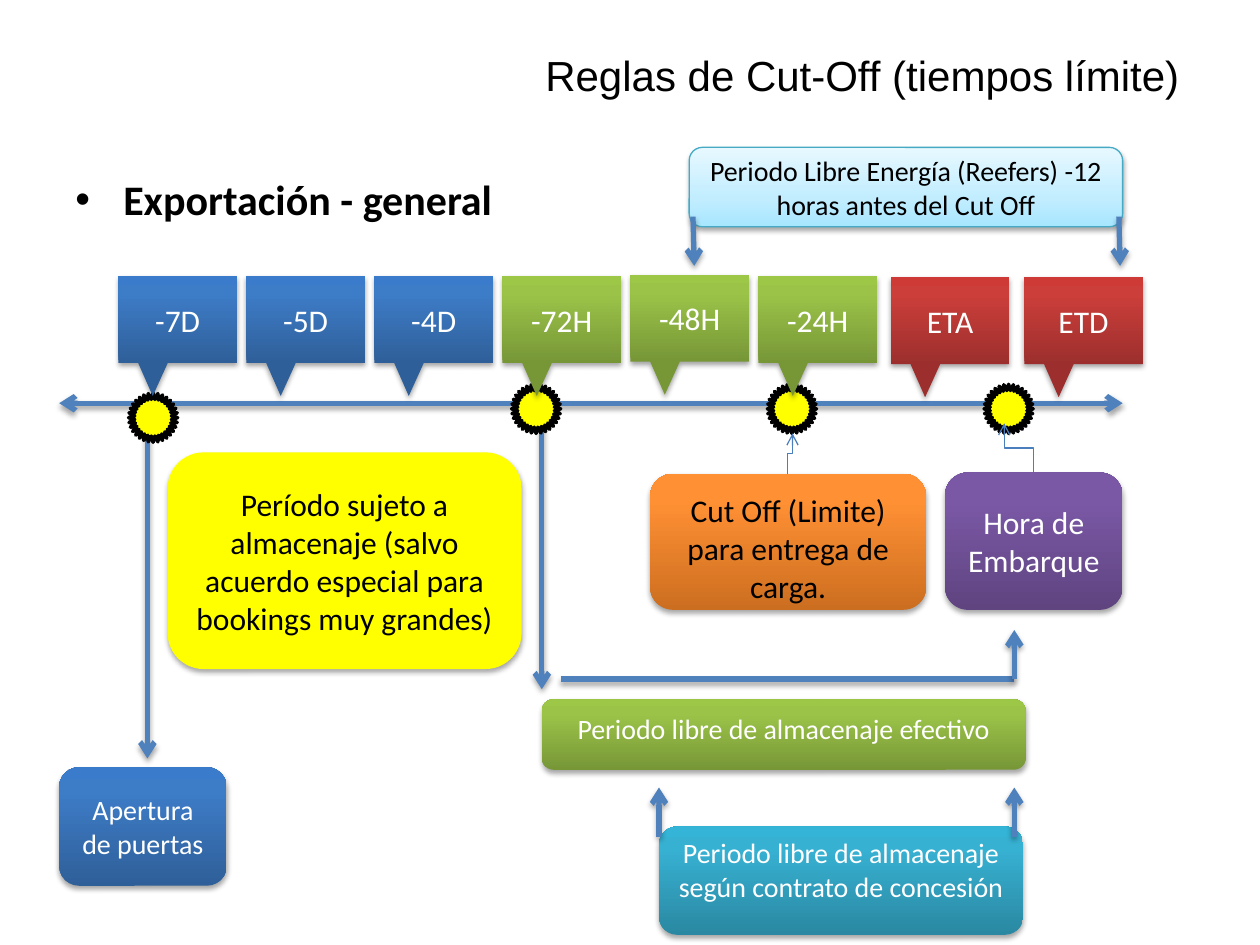
import pptx
import pptx.util
import pptx.dml.color
import pptx.enum.shapes
import pptx.enum.text
import pptx.oxml.ns
from lxml import etree

Inches = pptx.util.Inches
Pt = pptx.util.Pt
qn = pptx.oxml.ns.qn
SHAPE = pptx.enum.shapes.MSO_SHAPE
CONNECTOR = pptx.enum.shapes.MSO_CONNECTOR
ALIGN = pptx.enum.text.PP_ALIGN
ANCHOR = pptx.enum.text.MSO_ANCHOR

TITLE = "Reglas de Cut-Off (tiempos límite)"
HEADING = "Exportación - general"
BLACK, WHITE, YELLOW = "000000", "FFFFFF", "FFFF00"
ARROW_BLUE, LINK_BLUE = "4F81BD", "4B7EBC"

GRADIENTS = {
    "blue": [(0, "2F5F99"), (80, "3D7CC7"), (100, "3A7CCB")],
    "green": [(0, "779737"), (80, "9BC348"), (100, "9DC746")],
    "red": [(0, "9C2F2D"), (80, "CB3E3A"), (100, "CE3B37")],
    "orange": [(0, "CC6E20"), (80, "FF9034"), (100, "FF9136")],
    "purple": [(0, "5F4480"), (80, "7B58A6"), (100, "7C57A8")],
    "teal": [(0, "2A88A2"), (80, "37B1D2"), (100, "34B4D6")],
    "sky": [(0, "A7E6FF"), (35, "C1EDFF"), (100, "E7F8FF")],
}

HOUR_MARKS = [("-7D", "blue", 2.19), ("-5D", "blue", 2.19), ("-4D", "blue", 2.19),
              ("-72H", "green", 2.19), ("-48H", "green", 2.18), ("-24H", "green", 2.19)]
SHIP_MARKS = [("ETA", "red", 2.2), ("ETD", "red", 2.2)]
MARK_ROWS = [(HOUR_MARKS, 0.94, 1.016), (SHIP_MARKS, 7.07, 1.06)]

MILESTONES = [(1.02, 3.12), (4.06, 3.05), (6.09, 3.05), (7.81, 3.05)]

BOXES = [
    ("Cut Off (Limite) para entrega de carga.", (5.16, 3.76, 2.19, 1.08), "orange",
     dict(size=18, color=BLACK, top=0.13, bottom=0.03)),
    ("Hora de Embarque", (7.5, 3.75, 1.41, 1.09), "purple", dict(size=18)),
    ("Periodo libre de almacenaje según contrato de concesión", (5.23, 6.56, 2.89, 0.86),
     "teal", dict(size=16, bottom=0.23)),
    ("Periodo libre de almacenaje efectivo", (4.3, 5.55, 3.84, 0.56), "green",
     dict(size=16, bottom=0.15)),
    ("Apertura de puertas", (0.47, 6.09, 1.33, 0.94), "blue", dict(size=16)),
    ("Período sujeto a almacenaje (salvo acuerdo especial para bookings muy grandes)",
     (1.33, 3.59, 2.81, 1.72), YELLOW, dict(size=18, color=BLACK)),
    ("Periodo Libre Energía (Reefers) -12 horas antes del Cut Off",
     (5.47, 1.17, 3.44, 0.63), "sky", dict(size=16, color=BLACK)),
]

AXIS = (0.47, 3.2, 8.91, 3.2)
DROPS = [(1.17, 3.44, 1.17, 6.02), (4.3, 3.36, 4.3, 5.47)]
FREE_PERIOD = (4.45, 5.39, 8.05, 5.39)
ARROWS = [(8.05, 5.39, 8.05, 5), (8.05, 6.64, 8.05, 6.25), (5.23, 6.64, 5.23, 6.25),
          (5.5, 1.72, 5.51, 2.11), (8.88, 1.72, 8.89, 2.11)]
LINKS = [(6.25, 3.76, 6.29, 3.44), (8.2, 3.75, 7.97, 3.36)]


def rgb(value):
    return pptx.dml.color.RGBColor.from_string(value)


def write(shape, text, size=18, font="Calibri", color=WHITE, bold=False, align=ALIGN.CENTER,
          anchor=ANCHOR.MIDDLE, top=0.05, bottom=0.05, bullet=None):
    frame = shape.text_frame
    frame.word_wrap = True
    frame.auto_size = pptx.enum.text.MSO_AUTO_SIZE.NONE
    frame.vertical_anchor = anchor
    frame.margin_left = frame.margin_right = Inches(0.1)
    frame.margin_top, frame.margin_bottom = Inches(top), Inches(bottom)
    paragraph = frame.paragraphs[0]
    paragraph.alignment = align
    if bullet:
        props = paragraph._p.get_or_add_pPr()
        props.set("marL", str(Inches(0.38)))
        props.set("indent", str(-Inches(0.38)))
        etree.SubElement(props, qn("a:buFont"), typeface="Arial")
        etree.SubElement(props, qn("a:buChar"), char=bullet)
    run = paragraph.add_run()
    run.text = text
    run.font.size, run.font.name, run.font.bold = Pt(size), font, bold
    run.font.color.rgb = rgb(color)


def add_color(parent, value, alpha=None):
    color = etree.SubElement(parent, qn("a:srgbClr"), val=value)
    if alpha:
        etree.SubElement(color, qn("a:alpha"), val=str(alpha * 1000))


def cast_shadow(effects):
    outer = etree.SubElement(effects, qn("a:outerShdw"), blurRad=str(Pt(3.1)),
                             dist=str(Pt(1.8)), dir="5400000", rotWithShape="0")
    add_color(outer, BLACK, alpha=35)


def add_block(kind, place, fill, line=None, width=0.75, shadow=True):
    block = slide.shapes.add_shape(kind, *map(Inches, place))
    if fill in GRADIENTS:
        block.fill.gradient()
        block.fill.gradient_angle = 90
        stops = block._element.spPr.find(qn("a:gradFill")).find(qn("a:gsLst"))
        for stop in list(stops):
            stops.remove(stop)
        for position, value in GRADIENTS[fill]:
            add_color(etree.SubElement(stops, qn("a:gs"), pos=str(position * 1000)), value)
    else:
        block.fill.solid()
        block.fill.fore_color.rgb = rgb(fill)
    if line:
        block.line.color.rgb = rgb(line)
        block.line.width = Pt(width)
    else:
        block.line.fill.background()
    block.shadow.inherit = False
    if shadow:
        cast_shadow(block._element.spPr.find(qn("a:effectLst")))
    return block


def add_line(ends, kind=CONNECTOR.STRAIGHT, color=ARROW_BLUE, width=3, tips=("tailEnd",),
             shadow=True):
    connector = slide.shapes.add_connector(kind, *map(Inches, ends))
    connector.line.color.rgb = rgb(color)
    connector.line.width = Pt(width)
    for tip in tips:
        etree.SubElement(connector.line._get_or_add_ln(), qn("a:" + tip), type="arrow")
    effects = etree.SubElement(connector._element.spPr, qn("a:effectLst"))
    if shadow:
        cast_shadow(effects)
    return connector


def add_upward_link(x1, y1, x2, y2):
    middle_x, middle_y = (x1 + x2) / 2, (y1 + y2) / 2
    rise, shift = (y1 - y2) / 2, (x2 - x1) / 2
    ends = (middle_x - rise, middle_y - shift, middle_x + rise, middle_y + shift)
    link = add_line(ends, kind=CONNECTOR.ELBOW, color=LINK_BLUE, width=0.75, shadow=False)
    link._element.spPr.find(qn("a:xfrm")).set("rot", str(270 * 60000))


deck = pptx.Presentation()
deck.slide_width, deck.slide_height = Inches(10), Inches(7.5)
slide = deck.slides.add_slide(deck.slide_layouts[5])

title = slide.shapes.title
title.left, title.top, title.width, title.height = map(Inches, (3.44, 0.34, 6.02, 0.91))
write(title, TITLE, size=24, font="Arial", color=BLACK, align=ALIGN.RIGHT, anchor=ANCHOR.TOP)

heading = slide.shapes.add_textbox(*map(Inches, (0.5, 1.33, 9.19, 0.65)))
write(heading, HEADING, size=24, color=BLACK, bold=True, align=ALIGN.LEFT,
      anchor=ANCHOR.TOP, bullet="•")

add_line(AXIS, tips=("headEnd", "tailEnd"))
for drop in DROPS:
    add_line(drop)

for left, top in MILESTONES:
    add_block(SHAPE.STAR_32_POINT, (left, top, 0.39, 0.39), YELLOW, line=BLACK, width=2,
              shadow=False)

for marks, start, pitch in MARK_ROWS:
    for index, (label, fill, top) in enumerate(marks):
        mark = add_block(SHAPE.RECTANGULAR_CALLOUT,
                         (start + index * pitch, top, 0.94, 0.69), fill)
        mark.adjustments[0], mark.adjustments[1] = -0.21, 0.88
        write(mark, label)

for text, place, fill, style in BOXES:
    box = add_block(SHAPE.ROUNDED_RECTANGLE, place, fill,
                    line="46AAC5" if fill == "sky" else None)
    write(box, text, **style)

add_line(FREE_PERIOD, tips=())
for arrow in ARROWS:
    add_line(arrow)
for link_ends in LINKS:
    add_upward_link(*link_ends)

deck.save("out.pptx")
